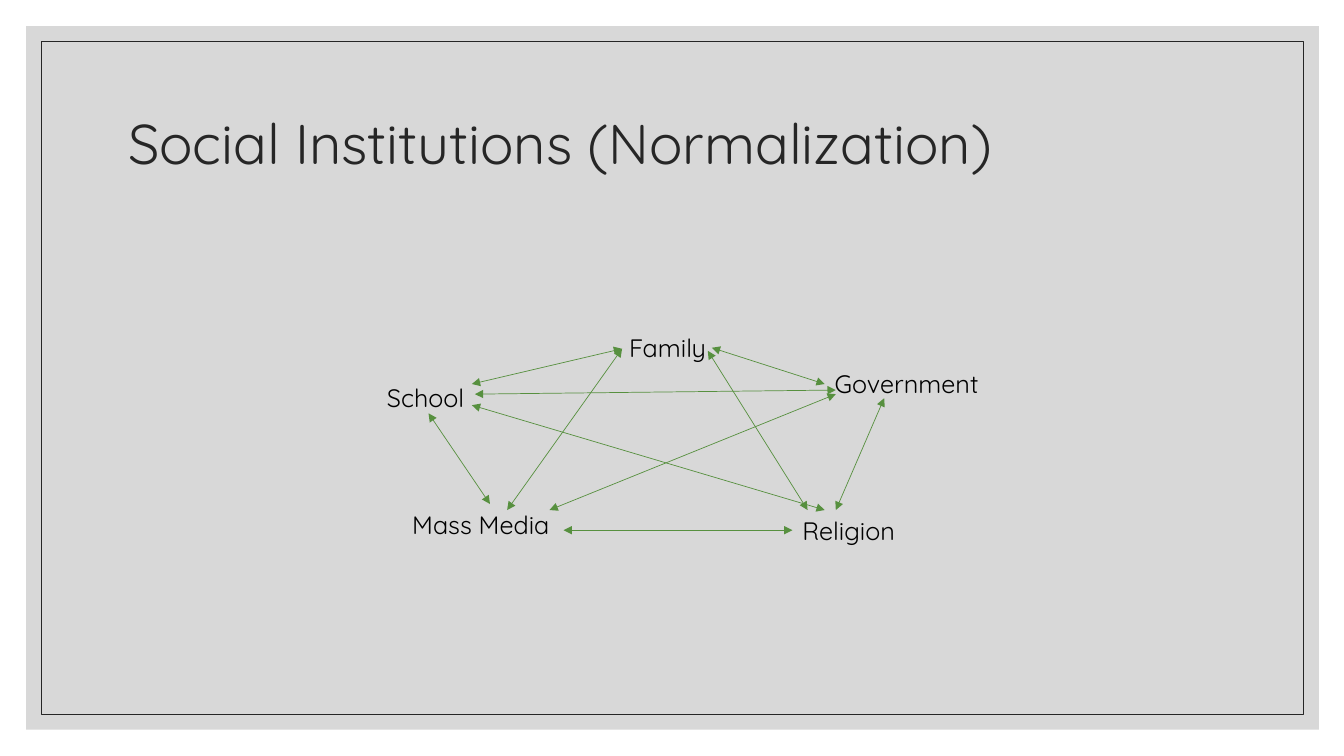
from pptx import Presentation
from pptx.dml.color import RGBColor
from pptx.enum.shapes import MSO_CONNECTOR, MSO_SHAPE
from pptx.enum.text import MSO_ANCHOR, MSO_AUTO_SIZE, PP_ALIGN
from pptx.oxml.ns import qn
from pptx.util import Pt
from lxml import etree

PX = 9144  # 100 px to the inch
FONT = "Quicksand"
GRAY = RGBColor(0xBF, 0xBF, 0xBF)
DARK = RGBColor(0x26, 0x26, 0x26)
BLACK = RGBColor(0, 0, 0)
GREEN = RGBColor(0x57, 0x90, 0x3F)
RECT = MSO_SHAPE.RECTANGLE
STRAIGHT = MSO_CONNECTOR.STRAIGHT
LEFT = PP_ALIGN.LEFT
MIDDLE, TOP = MSO_ANCHOR.MIDDLE, MSO_ANCHOR.TOP
GROW = MSO_AUTO_SIZE.SHAPE_TO_FIT_TEXT
NO_FIT = MSO_AUTO_SIZE.NONE


def px(*lengths):
    return [n * PX for n in lengths]


def write(sp, text, size, color, anchor, fit):
    tf = sp.text_frame
    tf.text = text
    tf.word_wrap = True
    tf.auto_size = fit
    tf.vertical_anchor = anchor
    p = tf.paragraphs[0]
    p.alignment = LEFT
    font = p.runs[0].font
    font.name, font.size, font.color.rgb = FONT, Pt(size), color
    return p


prs = Presentation()
prs.slide_width, prs.slide_height = px(1333, 750)
s = prs.slides.add_slide(prs.slide_layouts[5])

# Gray panel and thin frame
panel = s.shapes.add_shape(RECT, *px(26, 26, 1282, 698))
panel.shadow.inherit = False
panel.fill.solid()
panel.fill.fore_color.rgb = GRAY
panel.line.fill.background()
tint = panel.fill._xPr.find(qn("a:solidFill"))[0]
etree.SubElement(tint, qn("a:alpha"), val="60000")

frame = s.shapes.add_shape(RECT, *px(41, 41, 1252, 668))
frame.shadow.inherit = False
frame.fill.background()
frame.line.color.rgb = DARK
frame.line.width = Pt(0.5)

# Title, brought in front of the panel
title = s.shapes.title
title.left, title.top, title.width, title.height = px(117, 70, 1100, 150)
write(title, "Social Institutions (Normalization)", 40, DARK, MIDDLE, NO_FIT).line_spacing = 0.9
s.shapes._spTree.append(title._element)

# Institutions: left, top, width
institutions = {
    "Family": (614, 325, 145),
    "School": (374, 374, 114),
    "Government": (818, 361, 176),
    "Religion": (786, 506, 120),
    "Mass Media": (399, 500, 174),
}
for name, place in institutions.items():
    write(s.shapes.add_textbox(*px(*place, 40)), name, 18, BLACK, TOP, GROW)

# Two-way arrows between every pair: from x, y to x, y
arrows = [
    (468, 381, 617, 346),  # School - Family
    (706, 345, 818, 381),  # Family - Government
    (425, 410, 486, 500),  # School - Mass Media
    (877, 395, 829, 506),  # Government - Religion
    (559, 526, 786, 526),  # Mass Media - Religion
    (468, 402, 818, 506),  # School - Religion
    (545, 506, 829, 391),  # Mass Media - Government
    (471, 391, 829, 387),  # School - Government
    (617, 346, 503, 506),  # Family - Mass Media
    (702, 348, 801, 506),  # Family - Religion
]
for ends in arrows:
    arrow = s.shapes.add_connector(STRAIGHT, *px(*ends))
    arrow.line.color.rgb = GREEN
    arrow.line.width = Pt(0.5)
    ln = arrow.line._get_or_add_ln()
    for end in ("a:headEnd", "a:tailEnd"):
        etree.SubElement(ln, qn(end), type="triangle")
    etree.SubElement(arrow._element.spPr, qn("a:effectLst"))

prs.save("out.pptx")
